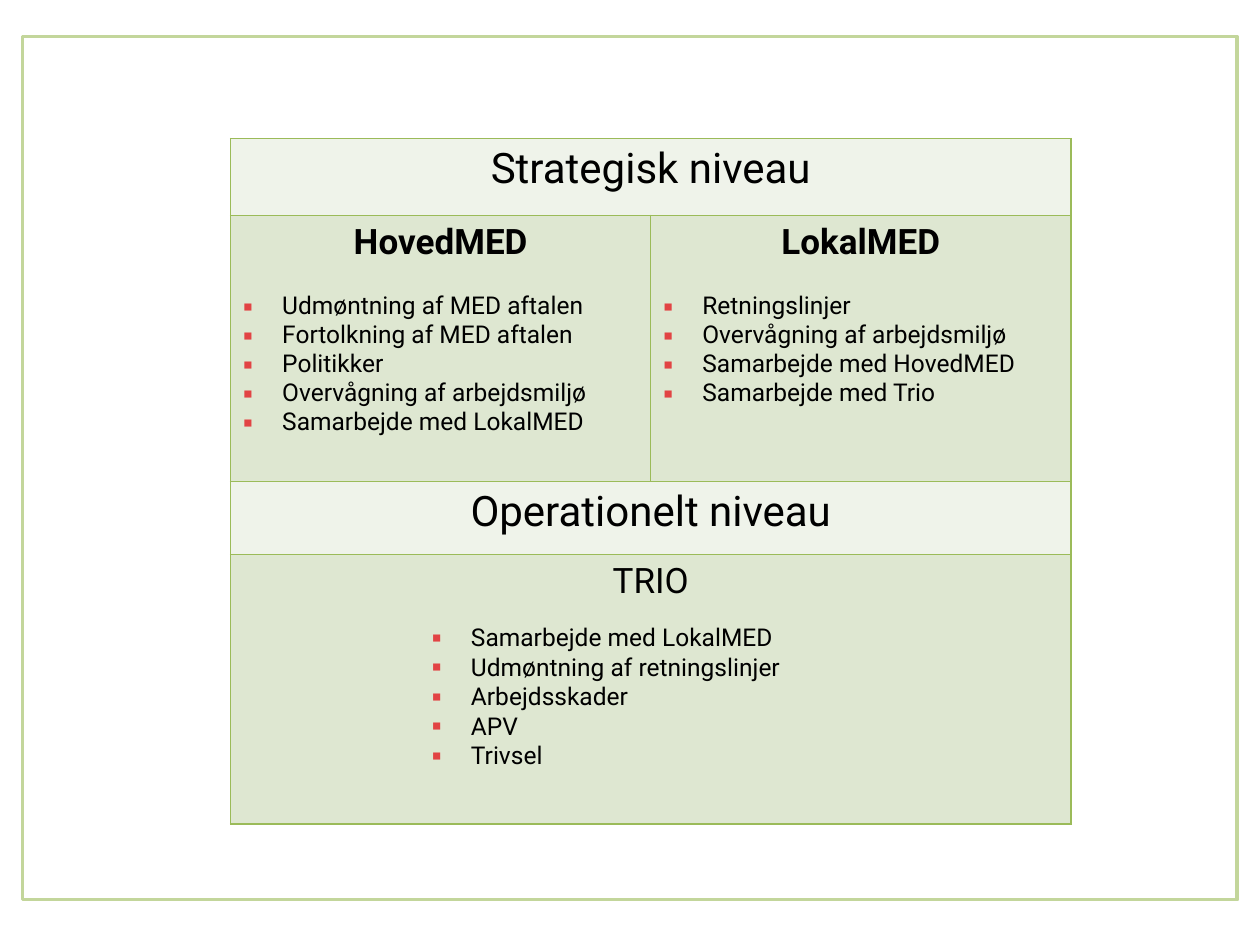
from dataclasses import dataclass

from lxml import etree
from pptx import Presentation
from pptx.dml.color import RGBColor
from pptx.enum.shapes import MSO_SHAPE
from pptx.enum.text import PP_ALIGN
from pptx.oxml.ns import qn
from pptx.util import Inches, Pt

RECT = MSO_SHAPE.RECTANGLE
CENTER, LEFT, JUSTIFY = PP_ALIGN.CENTER, PP_ALIGN.LEFT, PP_ALIGN.JUSTIFY


@dataclass(frozen=True)
class Theme:
    font: str = "Roboto"
    text: str = "000000"
    bullet: str = "E24444"
    frame: str = "C3D69B"
    border: str = "9BBB59"
    band: str = "EFF3EA"
    body: str = "DEE7D1"
    level_size: int = 24
    group_size: int = 20
    item_size: int = 14


THEME = Theme()

HOVED = ["Udmøntning af MED aftalen", "Fortolkning af MED aftalen", "Politikker",
         "Overvågning af arbejdsmiljø", "Samarbejde med LokalMED"]
LOKAL = ["Retningslinjer", "Overvågning af arbejdsmiljø",
         "Samarbejde med HovedMED", "Samarbejde med Trio"]
TRIO = ["Samarbejde med LokalMED", "Udmøntning af retningslinjer",
        "Arbejdsskader", "APV", "Trivsel"]


def rgb(value):
    return RGBColor.from_string(value)


def write(p, text, size, align, bold=False):
    p.alignment = align
    r = p.add_run()
    r.text = text
    formats = {"name": THEME.font, "size": Pt(size), "bold": bold}
    for name, value in formats.items():
        setattr(r.font, name, value)
    r.font.color.rgb = rgb(THEME.text)


def add_bullet(p):
    pPr = p._p.get_or_add_pPr()
    pPr.set("marL", str(Inches(0.31)))
    pPr.set("indent", str(Inches(-0.31)))
    clr = etree.SubElement(pPr, qn("a:buClr"))
    etree.SubElement(clr, qn("a:srgbClr"), val=THEME.bullet)
    etree.SubElement(pPr, qn("a:buFont"), typeface=THEME.font)
    etree.SubElement(pPr, qn("a:buChar"), char="▪")


def write_items(tf, items, align):
    for item in items:
        p = tf.paragraphs[0] if not tf.text else tf.add_paragraph()
        write(p, item, THEME.item_size, align)
        add_bullet(p)


def format_cell(cell, fill):
    tcPr = cell._tc.get_or_add_tcPr()
    for side in ("lnL", "lnR", "lnT", "lnB"):
        ln = etree.SubElement(tcPr, qn(f"a:{side}"), w=str(Pt(1)))
        solid = etree.SubElement(ln, qn("a:solidFill"))
        etree.SubElement(solid, qn("a:srgbClr"), val=THEME.border)
    cell.fill.solid()
    cell.fill.fore_color.rgb = rgb(fill)


def add_frame(slide, x, y, w, h):
    sp = slide.shapes.add_shape(RECT, x, y, w, h)
    sp.shadow.inherit = False
    sp.fill.background()
    sp.line.color.rgb = rgb(THEME.frame)
    sp.line.width = Pt(2)


def add_levels(slide, x, y, w, heights):
    fills = [THEME.band, THEME.body, THEME.band, THEME.body]
    table = slide.shapes.add_table(len(heights), 2, x, y, w, sum(heights)).table
    for row, height, fill in zip(table.rows, heights, fills):
        row.height = height
        for cell in row.cells:
            format_cell(cell, fill)

    spans = [(0, "Strategisk niveau", THEME.level_size),
             (2, "Operationelt niveau", THEME.level_size),
             (3, "TRIO", THEME.group_size)]
    for row, text, size in spans:
        cell = table.cell(row, 0)
        cell.merge(table.cell(row, 1))
        write(cell.text_frame.paragraphs[0], text, size, CENTER)

    for col, (name, items) in enumerate([("HovedMED", HOVED), ("LokalMED", LOKAL)]):
        tf = table.cell(1, col).text_frame
        p = tf.paragraphs[0]
        write(p, name, THEME.group_size, CENTER, bold=True)
        p.space_after = Pt(16.5)
        write_items(tf, items, LEFT)


def add_trio_items(slide, x, y, w, h):
    tf = slide.shapes.add_textbox(x, y, w, h).text_frame
    tf.word_wrap = True
    write_items(tf, TRIO, JUSTIFY)


def main():
    prs = Presentation()
    prs.slide_width, prs.slide_height = Inches(10), Inches(7.5)
    slide = prs.slides.add_slide(prs.slide_layouts[6])
    add_frame(slide, Inches(0.18), Inches(0.29), Inches(9.64), Inches(6.85))
    heights = [Inches(h) for h in (0.61, 2.11, 0.58, 2.14)]
    add_levels(slide, Inches(1.83), Inches(1.1), Inches(6.67), heights)
    add_trio_items(slide, Inches(3.33), Inches(4.89), Inches(4.84), Inches(1.58))
    prs.save("out.pptx")


if __name__ == "__main__":
    main()
